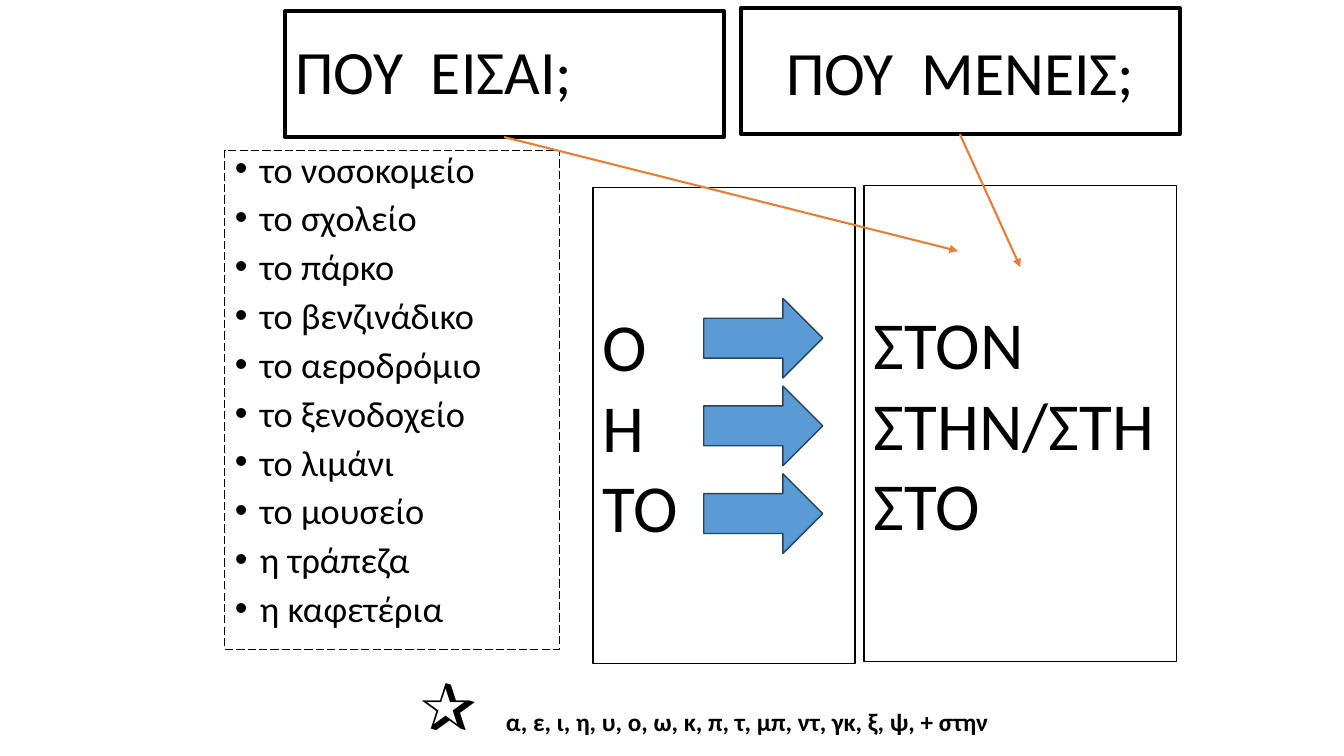
from lxml import etree
from pptx import Presentation
from pptx.dml.color import RGBColor
from pptx.enum.dml import MSO_LINE
from pptx.enum.shapes import MSO_CONNECTOR, MSO_SHAPE
from pptx.enum.text import MSO_ANCHOR, MSO_AUTO_SIZE, PP_ALIGN
from pptx.oxml.ns import qn
from pptx.util import Pt

PX = 9144  # 100 px to the inch
FONT = "Calibri"
BLACK = RGBColor(0x00, 0x00, 0x00)
WHITE = RGBColor(0xFF, 0xFF, 0xFF)
BLUE = RGBColor(0x5B, 0x9B, 0xD5)
NAVY = RGBColor(0x28, 0x44, 0x5D)
ORANGE = RGBColor(0xED, 0x7D, 0x31)
RECT, RIGHT_ARROW = MSO_SHAPE.RECTANGLE, MSO_SHAPE.RIGHT_ARROW
TOP, MIDDLE = MSO_ANCHOR.TOP, MSO_ANCHOR.MIDDLE
LEFT, CENTER = PP_ALIGN.LEFT, PP_ALIGN.CENTER
DASH = MSO_LINE.LONG_DASH
STRAIGHT = MSO_CONNECTOR.STRAIGHT
NO_AUTOFIT = MSO_AUTO_SIZE.NONE

HEADING = dict(alignment=LEFT, line_spacing=0.9)
PLACES = ["το νοσοκομείο", "το σχολείο", "το πάρκο", "το βενζινάδικο",
          "το αεροδρόμιο", "το ξενοδοχείο", "το λιμάνι", "το μουσείο",
          "η τράπεζα", "η καφετέρια"]
ARTICLES = ["Ο", "Η", "ΤΟ"]
PREPOSITIONS = ["ΣΤΟΝ", "ΣΤΗΝ/ΣΤΗ", "ΣΤΟ"]


def emu(*lengths):
    return [n * PX for n in lengths]


def set_attrs(obj, values):
    for name, value in values.items():
        setattr(obj, name, value)


def add_run(p, text, size, bold=False):
    r = p.add_run()
    r.text = text
    set_attrs(r.font, dict(name=FONT, size=Pt(size), bold=bold))
    r.font.color.rgb = BLACK


def set_line(sp, color, width, dash=None):
    sp.line.color.rgb = color
    sp.line.width = Pt(width)
    if dash:
        sp.line.dash_style = dash


def write_lines(sp, lines, size, anchor=MIDDLE, **paragraph):
    tf = sp.text_frame
    set_attrs(tf, dict(word_wrap=True, auto_size=NO_AUTOFIT, vertical_anchor=anchor))
    for i, line in enumerate(lines):
        p = tf.add_paragraph() if i else tf.paragraphs[0]
        set_attrs(p, paragraph)
        add_run(p, line, size)


def add_filled(slide, kind, box, fill, line, width):
    sp = slide.shapes.add_shape(kind, *emu(*box))
    sp.shadow.inherit = False
    sp.fill.solid()
    sp.fill.fore_color.rgb = fill
    set_line(sp, line, width)
    return sp


def place_title(slide, box, text):
    sp = slide.shapes.title
    set_attrs(sp, dict(zip(("left", "top", "width", "height"), emu(*box))))
    set_line(sp, BLACK, 3)
    write_lines(sp, [text], 44, **HEADING)


def add_heading(slide, box, text):
    sp = add_filled(slide, RECT, box, WHITE, BLACK, 3)
    write_lines(sp, [text], 44, alignment=CENTER)


def add_places(slide, box):
    sp = slide.shapes.add_textbox(*emu(*box))
    set_line(sp, BLACK, 0.75, DASH)
    write_lines(sp, PLACES, 25.9, TOP, line_spacing=0.8, space_before=Pt(10))
    for p in sp.text_frame.paragraphs:
        pPr = p._p.get_or_add_pPr()
        pPr.set("marL", str(25 * PX))
        pPr.set("indent", str(-25 * PX))
        etree.SubElement(pPr, qn("a:buFont")).set("typeface", "Arial")
        etree.SubElement(pPr, qn("a:buChar")).set("char", "•")


def add_word_panel(slide, box, words):
    sp = add_filled(slide, RECT, box, WHITE, BLACK, 1)
    write_lines(sp, words, 48, alignment=LEFT)


def add_articles(slide, box):
    """Panel of articles, with one block arrow beside each."""
    add_word_panel(slide, box, ARTICLES)
    x, y = box[:2]
    for i in range(len(ARTICLES)):
        add_filled(slide, RIGHT_ARROW, (x + 110, y + 110 + 87 * i, 118, 79), BLUE, NAVY, 1)


def add_rule(slide, box):
    """Starred note, its text aligned on a tab stop."""
    sp = slide.shapes.add_textbox(*emu(*box))
    sp.text_frame.word_wrap = True
    p = sp.text_frame.paragraphs[0]
    tabs = etree.SubElement(p._p.get_or_add_pPr(), qn("a:tabLst"))
    tab = etree.SubElement(tabs, qn("a:tab"))
    tab.set("pos", str(85 * PX))
    tab.set("algn", "l")
    add_run(p, "✰\t", 48, True)
    add_run(p, "α, ε, ι, η, υ, ο, ω, κ, π, τ, μπ, ντ, γκ, ξ, ψ, + στην", 18, True)


def add_pointer(slide, box, end):
    """Arrow from the middle of the box's bottom edge to end."""
    x, y, w, h = box
    c = slide.shapes.add_connector(STRAIGHT, *emu(x + w // 2, y + h, *end))
    set_line(c, ORANGE, 1.5)
    etree.SubElement(c.line._get_or_add_ln(), qn("a:tailEnd")).set("type", "triangle")
    etree.SubElement(c._element.spPr, qn("a:effectLst"))


def main():
    prs = Presentation()
    prs.slide_width, prs.slide_height = emu(1333, 750)
    slide = prs.slides.add_slide(prs.slide_layouts[5])
    where_are_you = (283, 11, 435, 125)
    where_you_live = (735, 8, 435, 125)

    place_title(slide, where_are_you, "ΠΟΥ  ΕΙΣΑΙ;")
    add_places(slide, (223, 149, 332, 495))
    add_articles(slide, (588, 186, 260, 472))
    add_word_panel(slide, (857, 184, 310, 472), PREPOSITIONS)
    add_rule(slide, (407, 654, 763, 91))
    add_heading(slide, where_you_live, "ΠΟΥ  ΜΕΝΕΙΣ;")
    add_pointer(slide, where_are_you, (950, 249))
    add_pointer(slide, where_you_live, (1012, 265))
    prs.save("out.pptx")


if __name__ == "__main__":
    main()
